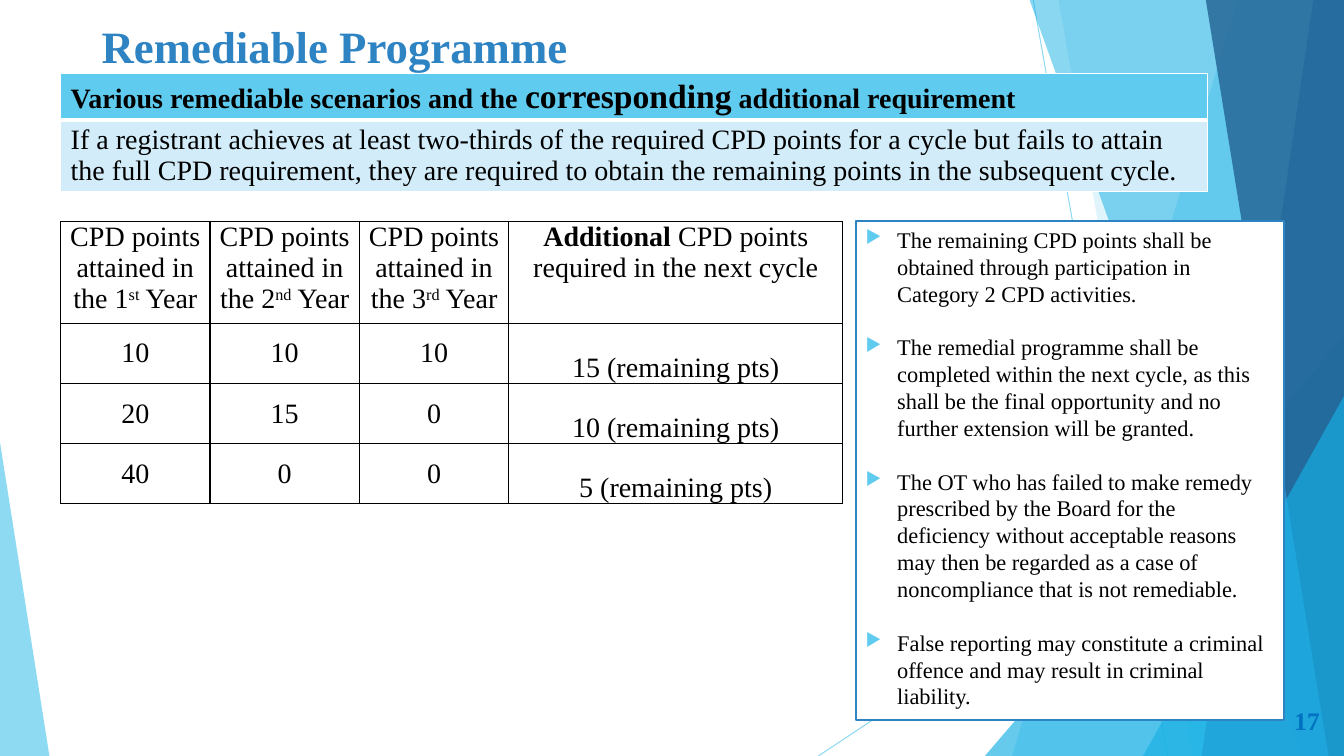
import pptx
import pptx.dml.color
import pptx.enum.shapes
import pptx.enum.text
import pptx.oxml
import pptx.oxml.ns
import pptx.util
from lxml import etree

Pt = pptx.util.Pt
qn = pptx.oxml.ns.qn
Align = pptx.enum.text.PP_ALIGN
Anchor = pptx.enum.text.MSO_ANCHOR
Shape = pptx.enum.shapes.MSO_SHAPE


def paint(fill, colour, opacity=100):
    fill.solid()
    fill.fore_color.rgb = pptx.dml.color.RGBColor.from_string(colour)
    if opacity < 100:
        tint = fill._xPr.find(".//" + qn("a:srgbClr"))
        etree.SubElement(tint, qn("a:alpha")).set("val", str(opacity * 1000))


def write(para, texts, size, colour="000000", bold=False, align=Align.LEFT):
    para.alignment = align
    para.font.name = "Times New Roman"
    para.font.size = Pt(size)
    para.font.bold = bold
    paint(para.font.fill, colour)
    for text in texts:
        para.add_run().text = text


deck = pptx.Presentation()
deck.slide_width, deck.slide_height = Pt(960), Pt(540)
page = deck.slides.add_slide(deck.slide_layouts[6])
shapes = page.shapes

# Thin background lines
for ends in [(738, 0, 834, 540), (960, 290, 584.6, 540)]:
    line = shapes.add_connector(pptx.enum.shapes.MSO_CONNECTOR.STRAIGHT, *map(Pt, ends))
    line.line.width = Pt(0.75)
    paint(line.line.fill, "5FCBEF", 70)
    etree.SubElement(line._element.spPr, qn("a:effectLst"))

# Background facets: bands given by top left and bottom left, triangles by frame and apex
facets = [
    ("band", (884.2, 722.9), "5FCBEF", 36),
    ("band", (756, 851.8), "5FCBEF", 20),
    ("triangle", (703.5, 240, 256.5, 300, 1), "17B0E4", 66),
    ("band", (735.2, 929.5), "17B0E4", 50),
    ("band", (938.2, 858.3), "2E83C3", 70),
    ("band", (861.2, 949), "226292", 80),
    ("triangle", (816.5, 283, 143.5, 257, 1), "17B0E4", 66),
    ("triangle", (0, 316, 35.3, 224, 0), "5FCBEF", 70),
]
for kind, place, colour, opacity in facets:
    if kind == "band":
        top_left, bottom_left = place
        outline = shapes.build_freeform(Pt(top_left), Pt(-0.7))
        corners = [(960, -0.7), (960, 540), (bottom_left, 540)]
        outline.add_line_segments([(Pt(x), Pt(y)) for x, y in corners], close=True)
        facet = outline.convert_to_shape()
    else:
        *frame, apex = place
        facet = shapes.add_shape(Shape.ISOSCELES_TRIANGLE, *map(Pt, frame))
        facet.adjustments[0] = apex
    paint(facet.fill, colour, opacity)
    facet.line.fill.background()
    facet.shadow.inherit = False

# Title
title = shapes.add_textbox(Pt(65.5), Pt(10), Pt(677), Pt(66)).text_frame
title.word_wrap = True
write(title.paragraphs[0], ["Remediable Programme"], 32, "2E83C3", True)

# Rule table
rule = shapes.add_table(2, 1, Pt(43.3), Pt(52.7), Pt(819.4), Pt(84.3)).table
rule.rows[0].height, rule.rows[1].height = Pt(33), Pt(51.3)
heading, statement = rule.cell(0, 0), rule.cell(1, 0)
write(heading.text_frame.paragraphs[0],
      ["Various remediable scenarios and the ", "corresponding", " additional requirement"],
      20, bold=True)
heading.text_frame.paragraphs[0].runs[1].font.size = Pt(24)
write(statement.text_frame.paragraphs[0], [
    "If a registrant achieves at least two-thirds of the required CPD points for a cycle "
    "but fails to attain the full CPD requirement, they are required to obtain the "
    "remaining points in the subsequent cycle."], 20)
for cell, colour in [(heading, "5FCBEF"), (statement, "D2ECF9")]:
    cell.vertical_anchor = Anchor.MIDDLE
    cell.margin_top = cell.margin_bottom = Pt(1.5)
    paint(cell.fill, colour)

# Notes panel
panel = shapes.add_shape(Shape.RECTANGLE, Pt(611.3), Pt(158), Pt(305.6), Pt(356.4))
panel.shadow.inherit = False
paint(panel.fill, "FFFFFF")
paint(panel.line.fill, "2E83C3")
panel.line.width = Pt(1.5)
panel.text_frame.word_wrap = True
panel.text_frame.vertical_anchor = Anchor.TOP
notes = [
    "The remaining CPD points shall be obtained through participation in Category 2 CPD "
    "activities.",
    "The remedial programme shall be completed within the next cycle, as this shall be the "
    "final opportunity and no further extension will be granted.",
    "The OT who has failed to make remedy prescribed by the Board for the deficiency without "
    "acceptable reasons may then be regarded as a case of noncompliance that is not remediable.",
    "False reporting may constitute a criminal offence and may result in criminal liability.",
]
for index, note in enumerate(notes):
    frame = panel.text_frame
    para = frame.add_paragraph() if index else frame.paragraphs[0]
    para.space_before = Pt(19.1 if index else 0)
    layout = para._p.get_or_add_pPr()
    layout.set("marL", str(Pt(22.5)))
    layout.set("indent", str(-Pt(22.5)))
    bullet_colour = etree.SubElement(layout, qn("a:buClr"))
    etree.SubElement(bullet_colour, qn("a:srgbClr")).set("val", "5FCBEF")
    etree.SubElement(layout, qn("a:buSzPct")).set("val", "80000")
    etree.SubElement(layout, qn("a:buChar")).set("char", "▶")
    write(para, [note], 16)

# Page number
number = shapes.add_textbox(Pt(895.7), Pt(500.4), Pt(54), Pt(28.8)).text_frame
number.word_wrap = True
number.vertical_anchor = Anchor.MIDDLE
write(number.paragraphs[0], ["17"], 18, "0070C0", True, Align.RIGHT)

# Scenario table
scenarios = [[["CPD points attained in the " + digit, suffix, " Year"]
              for digit, suffix in [("1", "st"), ("2", "nd"), ("3", "rd")]]
             + [["Additional ", "CPD points required in the next cycle"]]]
for *years, remaining in [(10, 10, 10, 15), (20, 15, 0, 10), (40, 0, 0, 5)]:
    scenarios.append([[str(points)] for points in years] + [[f"{remaining} (remaining pts)"]])
points_table = shapes.add_table(4, 4, Pt(43.3), Pt(158.4), Pt(558.7), Pt(201.5)).table
for column, width in zip(points_table.columns, [106.7, 106.7, 106.7, 238.6]):
    column.width = Pt(width)
for row, height in zip(points_table.rows, [72.5, 43, 43, 43]):
    row.height = Pt(height)
for r, texts_in_row in enumerate(scenarios):
    for c, texts in enumerate(texts_in_row):
        cell = points_table.cell(r, c)
        cell.fill.background()
        cell.margin_left = cell.margin_right = Pt(5)
        cell.margin_top = cell.margin_bottom = 0
        para = cell.text_frame.paragraphs[0]
        if r == 0:
            cell.vertical_anchor = Anchor.TOP
        elif c == 3:
            cell.vertical_anchor = Anchor.BOTTOM
            para.line_spacing = Pt(17)
        else:
            cell.vertical_anchor = Anchor.MIDDLE
        write(para, texts, 20, align=Align.CENTER)
        if r == 0 and c < 3:
            para.runs[1]._r.get_or_add_rPr().set("baseline", "30000")
        elif r == 0:
            para.runs[0].font.bold = True

# Cell borders: colour, and width of the line below the first row
for table, colour, divider in [(rule, "FFFFFF", 3), (points_table, "000000", 1)]:
    table.first_row = table.horz_banding = False
    for r, row in enumerate(table.rows):
        for cell in row.cells:
            for position, side in enumerate(["lnL", "lnR", "lnT", "lnB"]):
                shared = (r, side) in [(0, "lnB"), (1, "lnT")]
                border = pptx.oxml.parse_xml(
                    f'<a:{side} {pptx.oxml.ns.nsdecls("a")} w="{Pt(divider if shared else 1)}">'
                    f'<a:solidFill><a:srgbClr val="{colour}"/></a:solidFill></a:{side}>')
                cell._tc.get_or_add_tcPr().insert(position, border)

deck.save("out.pptx")
